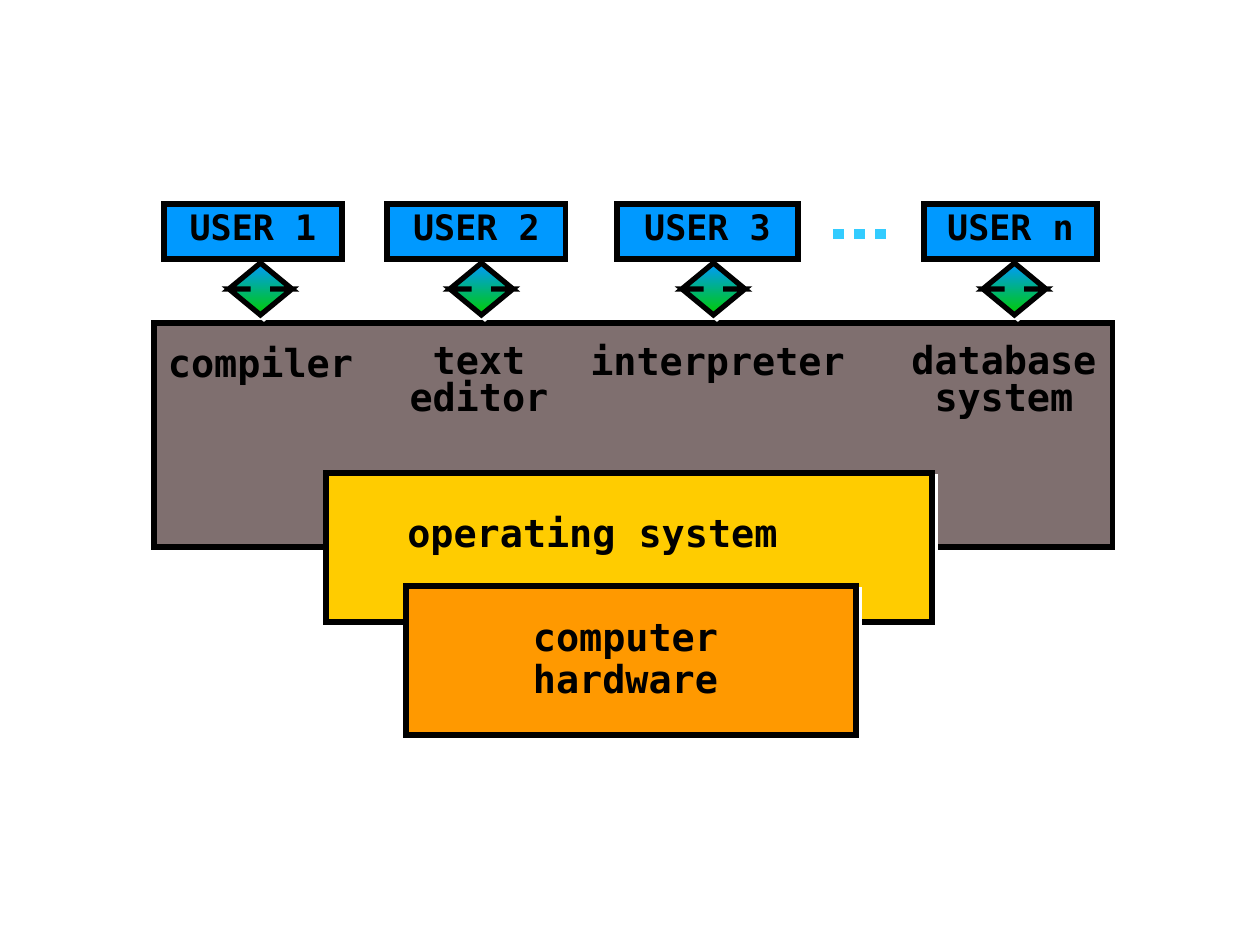
from dataclasses import dataclass

from lxml.etree import SubElement
from pptx import Presentation
from pptx.dml.color import RGBColor
from pptx.enum.dml import MSO_LINE
from pptx.enum.shapes import MSO_CONNECTOR, MSO_SHAPE
from pptx.enum.text import MSO_ANCHOR, MSO_AUTO_SIZE, PP_ALIGN
from pptx.oxml.ns import qn
from pptx.util import Emu, Pt

EMU_PER_PX = 914400 / 126
FONT = "DejaVu Sans Mono"

BLACK = RGBColor(0x00, 0x00, 0x00)
GREY = RGBColor(0x7F, 0x6F, 0x6F)
YELLOW = RGBColor(0xFF, 0xCC, 0x00)
ORANGE = RGBColor(0xFF, 0x99, 0x00)
BLUE = RGBColor(0x00, 0x99, 0xFF)
GREEN = RGBColor(0x00, 0xCC, 0x00)
CYAN = RGBColor(0x33, 0xCC, 0xFF)

USER_TOP, USER_HEIGHT = 204, 55
ARROW_TOP, ARROW_WIDTH, ARROW_HEIGHT = 263, 63, 52
DOTS_Y = 234


@dataclass(frozen=True)
class Layer:
    left: int
    top: int
    width: int
    height: int
    color: RGBColor


@dataclass(frozen=True)
class Label:
    text: str
    left: int
    top: int
    width: int
    height: int
    line_spacing: float | None = None
    align: PP_ALIGN = PP_ALIGN.CENTER
    indent: int = 0


@dataclass(frozen=True)
class User:
    name: str
    left: int
    width: int
    arrow_left: int


SOFTWARE = Layer(154, 323, 959, 224, GREY)
INNER_LAYERS = [
    Layer(326, 473, 606, 149, YELLOW),
    Layer(406, 586, 450, 149, ORANGE),
]
SOFTWARE_LABELS = [
    Label("compiler", 111, 333, 299, 59),
    Label("text editor", 372, 339, 214, 87, 0.8),
    Label("interpreter", 564, 331, 307, 59),
    Label("database system", 890, 339, 228, 87, 0.8),
]
INNER_LABELS = [
    Label("operating system", 311, 512, 639, 49, 0.8, PP_ALIGN.LEFT, 84),
    Label("computer hardware", 422, 612, 407, 54, 0.9),
]
USERS = [
    User("USER 1", 164, 178, 229),
    User("USER 2", 387, 179, 450),
    User("USER 3", 617, 181, 682),
    User("USER n", 924, 173, 983),
]


def px(length: int) -> Emu:
    return Emu(round(length * EMU_PER_PX))


def add_shadow(shape) -> None:
    """Give the shape a hard white shadow to the lower right."""
    properties = shape._element.spPr
    effects = properties.find(qn("a:effectLst"))
    if effects is None:
        effects = SubElement(properties, qn("a:effectLst"))
    shadow = SubElement(effects, qn("a:outerShdw"), dist="35921", dir="2700000",
                        algn="ctr", rotWithShape="0")
    SubElement(shadow, qn("a:srgbClr"), val="FFFFFF")


def write_text(shape, text: str, *, size: int, line_spacing: float | None = None,
               align: PP_ALIGN = PP_ALIGN.CENTER, indent: int = 0) -> None:
    frame = shape.text_frame
    frame.word_wrap = True
    frame.auto_size = MSO_AUTO_SIZE.SHAPE_TO_FIT_TEXT
    frame.vertical_anchor = MSO_ANCHOR.TOP
    para = frame.paragraphs[0]
    para.alignment = align
    para.line_spacing = line_spacing
    para.space_before = Pt(0)
    settings = para._p.get_or_add_pPr()
    space_before = settings.find(qn("a:spcBef"))
    space_before.remove(space_before[0])
    SubElement(space_before, qn("a:spcPct"), val="50000")
    if indent:
        settings.set("marL", str(px(indent)))
        settings.set("indent", "0")
    span = para.add_run()
    span.text = text
    span.font.name = FONT
    span.font.size = Pt(size)
    span.font.bold = True
    span.font.color.rgb = BLACK


def add_outlined(page, kind: MSO_SHAPE, left: int, top: int, width: int, height: int):
    """Add a preset shape with a black mitred outline and a shadow."""
    shape = page.shapes.add_shape(kind, px(left), px(top), px(width), px(height))
    shape.line.color.rgb = BLACK
    shape.line.width = Pt(3)
    SubElement(shape._element.spPr.find(qn("a:ln")), qn("a:miter"), lim="800000")
    shape.shadow.inherit = False
    add_shadow(shape)
    return shape


def add_layer(page, layer: Layer):
    box = add_outlined(page, MSO_SHAPE.RECTANGLE, layer.left, layer.top,
                       layer.width, layer.height)
    box.fill.solid()
    box.fill.fore_color.rgb = layer.color
    return box


def add_label(page, label: Label) -> None:
    box = page.shapes.add_textbox(px(label.left), px(label.top),
                                  px(label.width), px(label.height))
    write_text(box, label.text, size=22, line_spacing=label.line_spacing,
               align=label.align, indent=label.indent)


def add_user(page, user: User) -> None:
    box = add_layer(page, Layer(user.left, USER_TOP, user.width, USER_HEIGHT, BLUE))
    write_text(box, user.name, size=20, line_spacing=0.9)


def add_user_arrow(page, user: User) -> None:
    arrow = add_outlined(page, MSO_SHAPE.UP_DOWN_ARROW, user.arrow_left, ARROW_TOP,
                         ARROW_WIDTH, ARROW_HEIGHT)
    arrow.adjustments[0] = 0.5
    arrow.adjustments[1] = 0.31
    arrow.fill.gradient()
    arrow.fill.gradient_angle = 270
    for stop, color in zip(arrow.fill.gradient_stops, (BLUE, GREEN)):
        stop.color.rgb = color


def add_dots(page, start: int, end: int) -> None:
    dots = page.shapes.add_connector(MSO_CONNECTOR.STRAIGHT, px(start), px(DOTS_Y),
                                     px(end), px(DOTS_Y))
    dots.line.color.rgb = CYAN
    dots.line.width = Pt(6)
    dots.line.dash_style = MSO_LINE.ROUND_DOT
    add_shadow(dots)


def main() -> None:
    deck = Presentation()
    deck.slide_width, deck.slide_height = px(1260), px(945)
    page = deck.slides.add_slide(deck.slide_layouts[6])
    add_layer(page, SOFTWARE)
    for label in SOFTWARE_LABELS:
        add_label(page, label)
    for layer in INNER_LAYERS:
        add_layer(page, layer)
    for user in USERS:
        add_user(page, user)
    add_dots(page, 833, 890)
    for label in INNER_LABELS:
        add_label(page, label)
    for user in USERS:
        add_user_arrow(page, user)
    deck.save("out.pptx")


if __name__ == "__main__":
    main()
